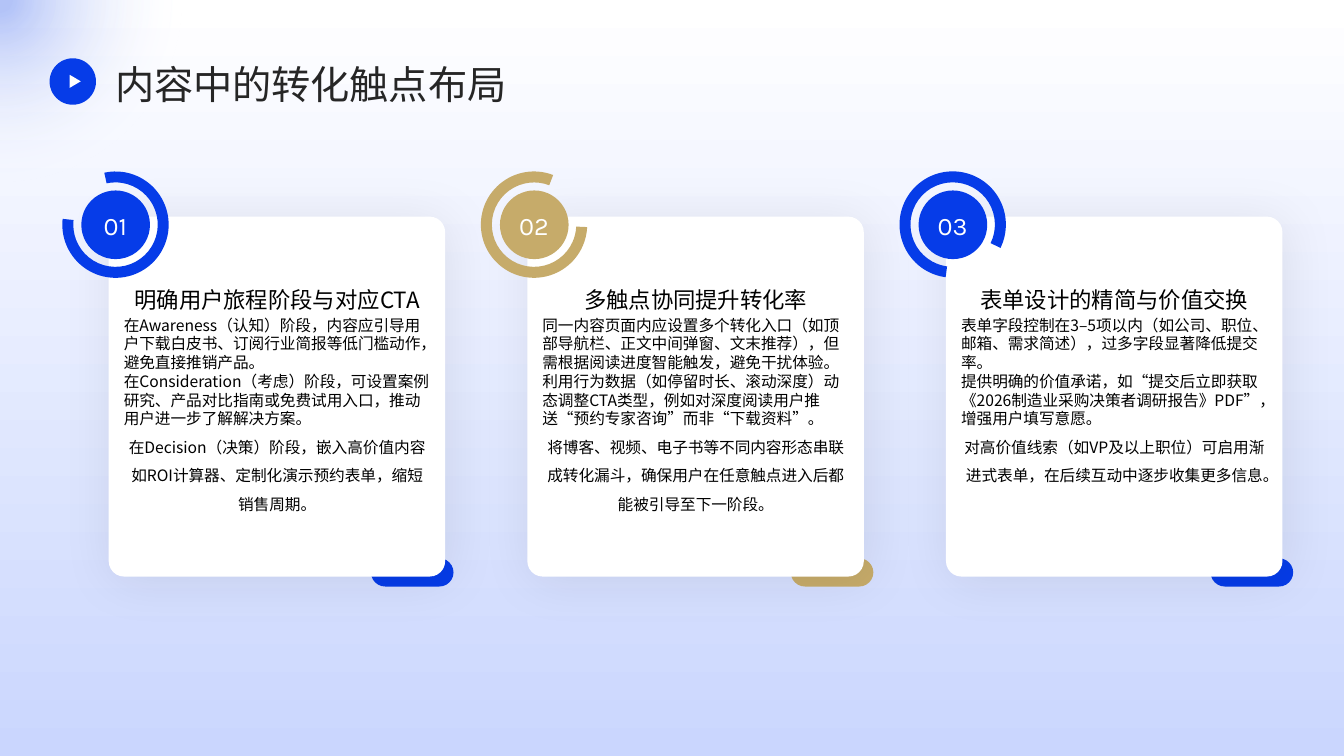
from pptx import Presentation
from pptx.dml.color import RGBColor
from pptx.enum.shapes import MSO_SHAPE
from pptx.enum.text import MSO_ANCHOR, PP_ALIGN
from pptx.oxml import parse_xml
from pptx.oxml.ns import nsdecls, qn
from pptx.util import Cm, Pt

BLUE = RGBColor(0x06, 0x3C, 0xE8)
GOLD = RGBColor(0xC6, 0xAB, 0x6A)
PALE_BLUE = RGBColor(0xCA, 0xD6, 0xFE)
WHITE = RGBColor(0xFF, 0xFF, 0xFF)
BLACK = RGBColor(0x00, 0x00, 0x00)
DARK = RGBColor(0x26, 0x26, 0x26)
CJK_FONT = "Noto Sans CJK SC"

CARDS = [
    ("01", BLUE, 189, "明确用户旅程阶段与对应CTA", [
        "在Awareness（认知）阶段，内容应引导用户下载白皮书、订阅行业简报等低门槛动作，避免直接推销产品。",
        "在Consideration（考虑）阶段，可设置案例研究、产品对比指南或免费试用入口，推动用户进一步了解解决方案。",
        "在Decision（决策）阶段，嵌入高价值内容如ROI计算器、定制化演示预约表单，缩短销售周期。"]),
    ("02", GOLD, 293.8, "多触点协同提升转化率", [
        "同一内容页面内应设置多个转化入口（如顶部导航栏、正文中间弹窗、文末推荐），但需根据阅读进度智能触发，避免干扰体验。",
        "利用行为数据（如停留时长、滚动深度）动态调整CTA类型，例如对深度阅读用户推送“预约专家咨询”而非“下载资料”。",
        "将博客、视频、电子书等不同内容形态串联成转化漏斗，确保用户在任意触点进入后都能被引导至下一阶段。"]),
    ("03", BLUE, 28.8, "表单设计的精简与价值交换", [
        "表单字段控制在3–5项以内（如公司、职位、邮箱、需求简述），过多字段显著降低提交率。",
        "提供明确的价值承诺，如“提交后立即获取《2026制造业采购决策者调研报告》PDF”，增强用户填写意愿。",
        "对高价值线索（如VP及以上职位）可启用渐进式表单，在后续互动中逐步收集更多信息。"]),
]

presentation = Presentation()
presentation.slide_width = Cm(33.87)
presentation.slide_height = Cm(19.05)
slide = presentation.slides.add_slide(presentation.slide_layouts[6])


def add_shape(kind, left, top, width, height, color=None, rotation=0):
    shape = slide.shapes.add_shape(kind, Cm(left), Cm(top), Cm(width), Cm(height))
    shape.shadow.inherit = False
    shape.line.fill.background()
    shape.rotation = rotation
    if color is not None:
        shape.fill.solid()
        shape.fill.fore_color.rgb = color
    return shape


def add_text(box, paragraphs, size, color, font=CJK_FONT, anchor=MSO_ANCHOR.MIDDLE):
    """Each paragraph is (text, alignment, line spacing)."""
    left, top, width, height = box
    frame = slide.shapes.add_textbox(Cm(left), Cm(top), Cm(width), Cm(height)).text_frame
    frame.margin_left = frame.margin_right = frame.margin_top = frame.margin_bottom = 0
    frame.word_wrap = True
    frame.vertical_anchor = anchor
    for index, (text, alignment, spacing) in enumerate(paragraphs):
        paragraph = frame.add_paragraph() if index else frame.paragraphs[0]
        paragraph.alignment = alignment
        paragraph.line_spacing = spacing
        run = paragraph.add_run()
        run.text = text
        run.font.size = Pt(size)
        run.font.color.rgb = color
        run.font.name = font
        east_asian = parse_xml(f'<a:ea {nsdecls("a")} typeface="{font}"/>')
        run.font._element.find(qn("a:latin")).addnext(east_asian)


# Background
background = add_shape(MSO_SHAPE.RECTANGLE, 0, 0, 33.87, 19.05)
background.fill.gradient()
background.fill.gradient_angle = 270
for stop, color in zip(background.fill.gradient_stops, (WHITE, PALE_BLUE)):
    stop.color.rgb = color

# Cards
for index, (number, color, rotation, heading, body) in enumerate(CARDS):
    offset = index * 10.55

    # Tab behind the card
    tab = add_shape(MSO_SHAPE.ROUNDED_RECTANGLE, 9.35 + index * 10.58, 14.07, 2.08, 0.71, color)
    tab.adjustments[0] = 0.5

    # White panel with a soft shadow
    panel = add_shape(MSO_SHAPE.ROUNDED_RECTANGLE, 2.74 + offset, 5.46, 8.48, 9.07, WHITE)
    panel.adjustments[0] = 0.046
    panel._element.spPr.find(qn("a:effectLst")).append(parse_xml(
        f'<a:outerShdw {nsdecls("a")} blurRad="{Pt(37)}" dist="{Pt(3)}" dir="2700000" '
        'algn="tl" rotWithShape="0"><a:srgbClr val="000000"><a:alpha val="8000"/>'
        '</a:srgbClr></a:outerShdw>'))

    # Number badge
    ring = add_shape(MSO_SHAPE.BLOCK_ARC, 1.57 + offset, 4.32, 2.68, 2.68, color, rotation)
    for position, value in enumerate((41.312, 214.359, 0.103)):
        ring.adjustments[position] = value
    add_shape(MSO_SHAPE.OVAL, 2.05 + offset, 4.8, 1.73, 1.73, color)
    add_text((2.31 + offset, 5.18, 1.19, 0.99), [(number, PP_ALIGN.CENTER, 1.0)],
             18, WHITE, "Karla")

    # Heading and body
    add_text((3.12 + offset, 6.96, 7.73, 0.99), [(heading, PP_ALIGN.CENTER, 1.3)], 16, BLACK)
    *opening, closing = body
    paragraphs = [(text, PP_ALIGN.LEFT, Pt(13.4)) for text in opening]
    paragraphs.append((closing, PP_ALIGN.CENTER, Pt(20.3)))
    add_text((3.12 + offset, 7.95, 7.73, 5.33), paragraphs, 11.2, BLACK, anchor=MSO_ANCHOR.TOP)

# Corner glow
glow = add_shape(MSO_SHAPE.OVAL, -4.57, -4.57, 9.14, 9.14)
glow.fill.gradient()
for stop, color, position, alpha in zip(
        glow.fill.gradient_stops, (BLUE, WHITE), (0.04, 0.72), (30000, 0)):
    stop.color.rgb = color
    stop.position = position
    stop._element.find(qn("a:srgbClr")).append(
        parse_xml(f'<a:alpha {nsdecls("a")} val="{alpha}"/>'))
gradient = glow._element.spPr.find(qn("a:gradFill"))
gradient.replace(gradient.find(qn("a:lin")), parse_xml(
    f'<a:path {nsdecls("a")} path="circle">'
    '<a:fillToRect l="50000" t="50000" r="50000" b="50000"/></a:path>'))

# Title with play button
add_text((2.9, 1.45, 29.08, 1.19), [("内容中的转化触点布局", PP_ALIGN.LEFT, 1.1)], 28, DARK)
add_shape(MSO_SHAPE.OVAL, 1.25, 1.47, 1.17, 1.17, BLUE)
add_shape(MSO_SHAPE.ISOSCELES_TRIANGLE, 1.73, 1.91, 0.33, 0.28, WHITE, 90)

presentation.save("out.pptx")
